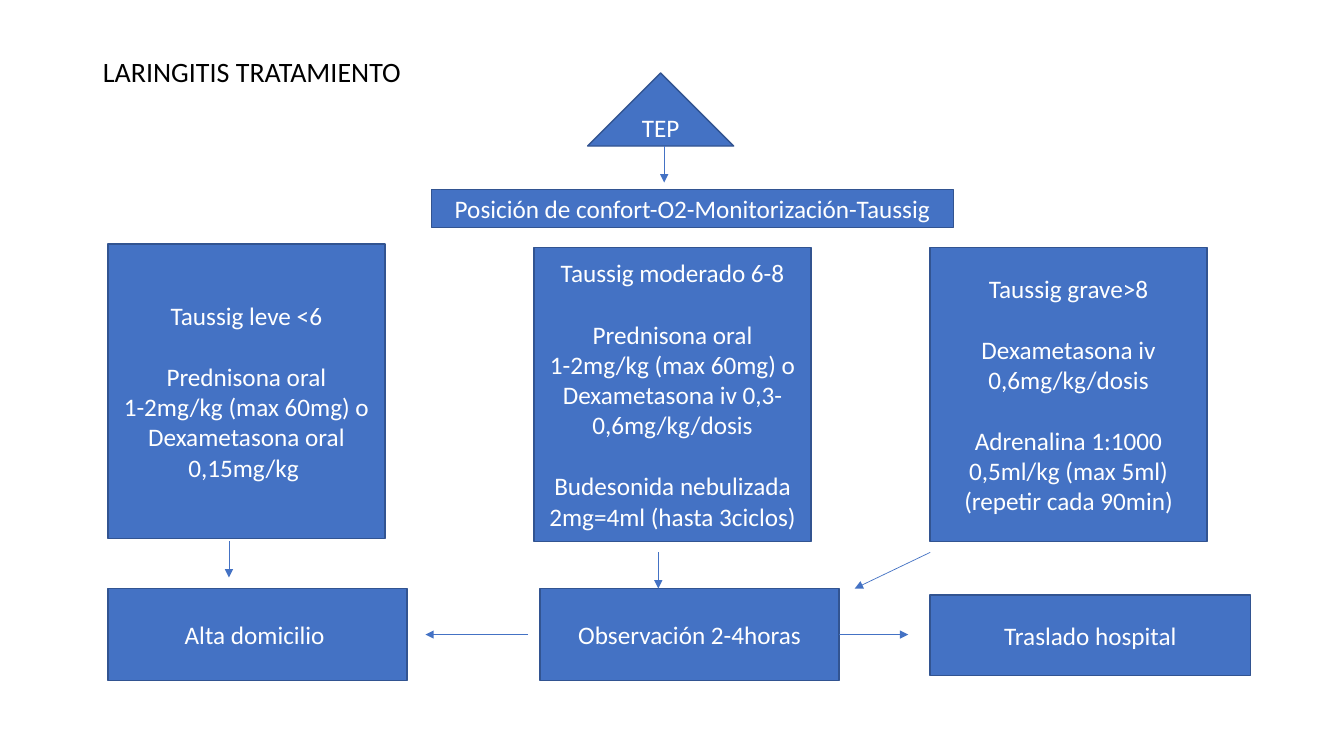
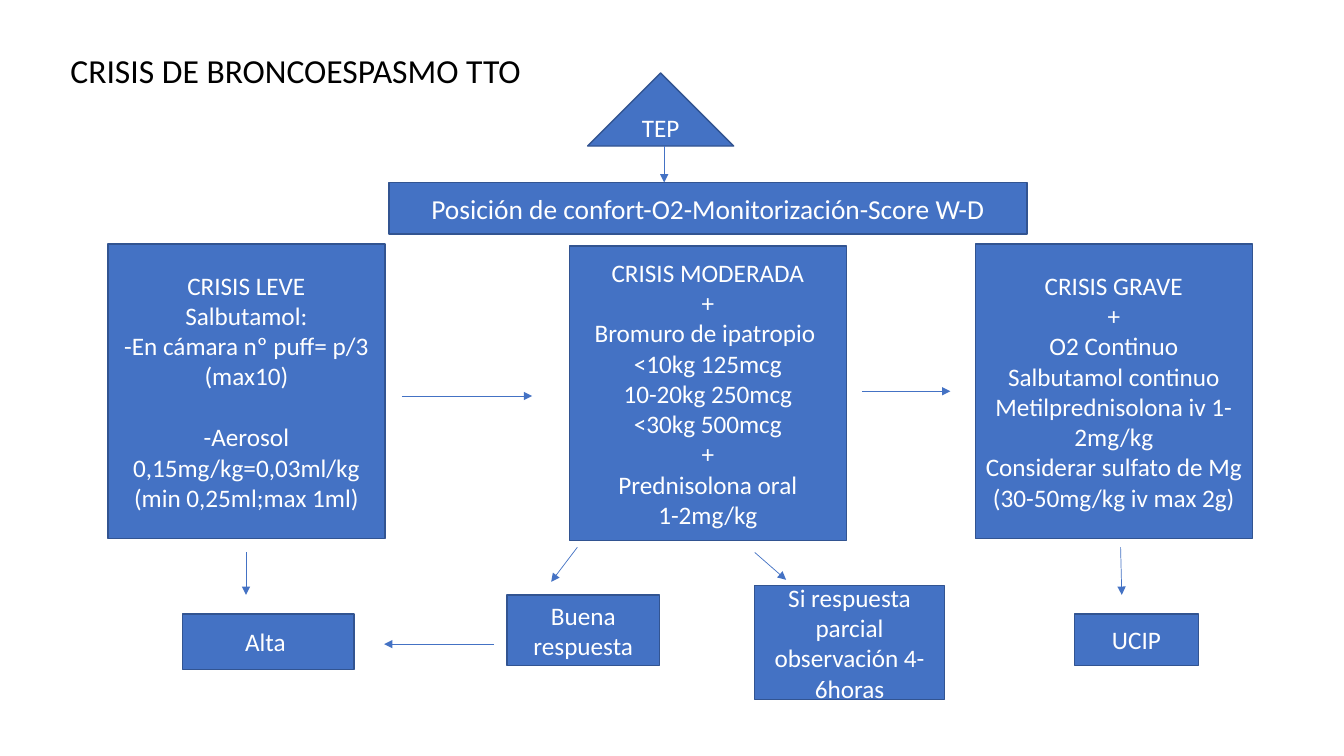
import lxml.etree
import pptx
import pptx.dml.color
import pptx.enum.shapes
import pptx.enum.text
import pptx.oxml.ns
import pptx.util

Cm = pptx.util.Cm
Pt = pptx.util.Pt
SHAPES = pptx.enum.shapes.MSO_SHAPE

COLORS = {"fill": "4472C4", "outline": "325491", "light": "FFFFFF", "title": "000000"}
FONT = "Calibri"
BODY_SIZE = 18
SECTION_GAP = 22
CARD_WIDTH, CARD_HEIGHT = 6.98, 7.42
LEFT_EDGE = 2.72
CARD_TOP = 6.15


def color(name):
    return pptx.dml.color.RGBColor.from_string(COLORS[name])


def format_para(para, size, color_name, align):
    para.alignment = align
    for span in para.runs:
        span.font.name = FONT
        span.font.size = Pt(size)
        span.font.color.rgb = color(color_name)


def add_page(deck, title, left, size):
    page = deck.slides.add_slide(deck.slide_layouts[5])
    heading = page.shapes.title
    heading.left, heading.top = Cm(left), Cm(0)
    heading.width, heading.height = Cm(29.21), Cm(3.68)
    frame = heading.text_frame
    frame.text = title
    frame.auto_size = pptx.enum.text.MSO_AUTO_SIZE.NONE
    frame.vertical_anchor = pptx.enum.text.MSO_ANCHOR.MIDDLE
    para = frame.paragraphs[0]
    para.line_spacing = 0.9
    format_para(para, size, "title", pptx.enum.text.PP_ALIGN.LEFT)
    return page


def add_box(page, left, top, width, height, sections, size=BODY_SIZE, kind=SHAPES.RECTANGLE):
    box = page.shapes.add_shape(kind, Cm(left), Cm(top), Cm(width), Cm(height))
    box.shadow.inherit = False
    box.fill.solid()
    box.fill.fore_color.rgb = color("fill")
    box.line.color.rgb = color("outline")
    box.line.width = Pt(1)
    frame = box.text_frame
    frame.word_wrap = True
    frame.vertical_anchor = pptx.enum.text.MSO_ANCHOR.MIDDLE
    frame.text = "\n".join("\n".join(section) for section in sections)
    starts = set()
    count = 0
    for section in sections:
        starts.add(count)
        count += len(section)
    for index, para in enumerate(frame.paragraphs):
        format_para(para, size, "light", pptx.enum.text.PP_ALIGN.CENTER)
        if index and index in starts:
            para.space_before = Pt(SECTION_GAP)
    return box


def add_label(page, left, top, width, height, text, size=BODY_SIZE):
    return add_box(page, left, top, width, height, [[text]], size)


def add_card(page, left, top, *sections):
    return add_box(page, left, top, CARD_WIDTH, CARD_HEIGHT, sections)


def add_arrow(page, start_x, start_y, end_x, end_y):
    arrow = page.shapes.add_connector(
        pptx.enum.shapes.MSO_CONNECTOR.STRAIGHT,
        Cm(start_x), Cm(start_y), Cm(end_x), Cm(end_y),
    )
    arrow.line.color.rgb = color("fill")
    arrow.line.width = Pt(0.5)
    qualified = pptx.oxml.ns.qn
    outline = arrow.line._get_or_add_ln()
    lxml.etree.SubElement(outline, qualified("a:tailEnd"), type="triangle")
    lxml.etree.SubElement(arrow._element.spPr, qualified("a:effectLst"))
    return arrow


def add_start(page):
    add_box(page, 14.81, 1.84, 3.68, 1.84, [["TEP"]], kind=SHAPES.ISOSCELES_TRIANGLE)
    add_arrow(page, 16.74, 3.68, 16.74, 4.6)


def build_laryngitis(deck):
    page = add_page(deck, "LARINGITIS TRATAMIENTO", 2.34, 20)
    add_start(page)
    add_label(page, 10.87, 4.78, 13.16, 0.95, "Posición de confort-O2-Monitorización-Taussig")

    add_card(
        page, LEFT_EDGE, CARD_TOP,
        ["Taussig leve <6"],
        ["Prednisona oral 1-2mg/kg (max 60mg) o Dexametasona oral 0,15mg/kg "],
    )
    add_card(
        page, 13.46, 6.23,
        ["Taussig moderado 6-8"],
        ["Prednisona oral 1-2mg/kg (max 60mg) o Dexametasona iv 0,3-0,6mg/kg/dosis"],
        ["Budesonida nebulizada", "2mg=4ml (hasta 3ciclos)"],
    )
    add_card(
        page, 23.44, 6.23,
        ["Taussig grave>8"],
        ["Dexametasona iv 0,6mg/kg/dosis"],
        ["Adrenalina 1:1000", "0,5ml/kg (max 5ml)", "(repetir cada 90min)"],
    )

    add_label(page, LEFT_EDGE, 14.83, 7.54, 2.32, "Alta domicilio ")
    observation = add_label(page, 13.61, 14.83, 7.54, 2.32, "Observación 2-4horas")
    add_label(page, 23.44, 14.99, 8.08, 2.03, "Traslado hospital")

    add_arrow(page, 5.77, 13.64, 5.77, 14.55)
    add_arrow(page, 16.59, 13.92, 16.59, 14.83)
    add_arrow(page, 23.44, 13.92, 21.54, 14.83)
    add_arrow(page, 13.31, 15.99, 10.72, 15.99)
    add_arrow(page, 21.15, 15.99, 22.89, 15.99).begin_connect(observation, 3)


def build_bronchospasm(deck):
    page = add_page(deck, "CRISIS DE BRONCOESPASMO TTO", 1.52, 24)
    add_start(page)
    add_label(page, 9.8, 4.6, 16.08, 1.3, "Posición de confort-O2-Monitorización-Score W-D", 19.6)

    add_card(
        page, LEFT_EDGE, CARD_TOP,
        ["CRISIS LEVE", "Salbutamol:", "-En cámara nº puff= p/3 (max10)"],
        ["-Aerosol 0,15mg/kg=0,03ml/kg (min 0,25ml;max 1ml)"],
    )
    add_card(
        page, 14.35, 6.2,
        [
            "CRISIS MODERADA", "+", "Bromuro de ipatropio ",
            "<10kg 125mcg", "10-20kg 250mcg", "<30kg 500mcg",
            "+", "Prednisolona oral", "1-2mg/kg",
        ],
    )
    add_card(
        page, 24.58, CARD_TOP,
        [
            "CRISIS GRAVE", "+", "O2 Continuo", "Salbutamol continuo",
            "Metilprednisolona iv 1-2mg/kg",
            "Considerar sulfato de Mg (30-50mg/kg iv max 2g)",
        ],
    )

    add_label(page, 4.6, 15.47, 4.32, 1.4, "Alta ")
    add_label(page, 12.78, 14.99, 3.84, 1.78, "Buena respuesta")
    add_label(page, 19.02, 14.76, 4.78, 2.87, "Si respuesta parcial observación 4-6horas")
    add_label(page, 27.08, 15.47, 3.12, 1.3, "UCIP")

    add_arrow(page, 10.13, 9.98, 13.41, 9.98)
    add_arrow(page, 21.72, 9.86, 23.95, 9.86)
    add_arrow(page, 6.2, 13.92, 6.2, 14.99)
    add_arrow(page, 14.55, 13.79, 13.89, 14.66)
    add_arrow(page, 19.02, 13.92, 19.81, 14.61)
    add_arrow(page, 28.24, 13.79, 28.27, 14.99)
    add_arrow(page, 12.45, 16.23, 9.68, 16.23)


def main():
    deck = pptx.Presentation()
    deck.slide_width, deck.slide_height = Cm(33.87), Cm(19.05)
    build_laryngitis(deck)
    build_bronchospasm(deck)
    deck.save("out.pptx")


if __name__ == "__main__":
    main()
